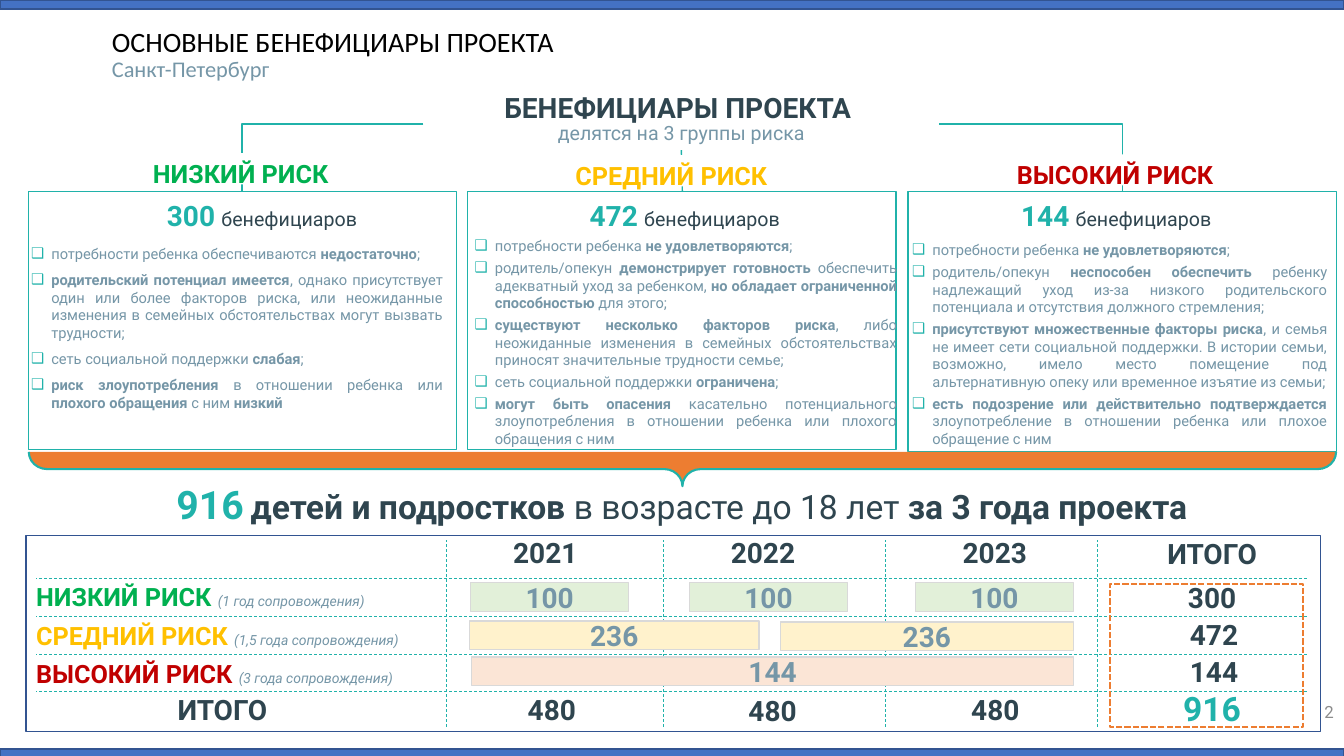
from dataclasses import dataclass
from lxml import etree
from pptx import Presentation
from pptx.dml.color import RGBColor
from pptx.enum import dml, shapes, text
from pptx.oxml.ns import qn
from pptx.util import Pt

DASH, DOTS = dml.MSO_LINE.DASH, dml.MSO_LINE.SQUARE_DOT
RECT = shapes.MSO_SHAPE.RECTANGLE
PLAIN, ELBOW = shapes.MSO_CONNECTOR.STRAIGHT, shapes.MSO_CONNECTOR.ELBOW
LEFT, MID, RIGHT, FULL = (text.PP_ALIGN.LEFT, text.PP_ALIGN.CENTER,
                          text.PP_ALIGN.RIGHT, text.PP_ALIGN.JUSTIFY)


@dataclass(frozen=True)
class Theme:
    font: str = "Roboto"
    head: str = "Calibri"
    teal: str = "20B2AA"
    dark: str = "2F454F"
    slate: str = "7596A7"
    black: str = "000000"
    white: str = "FFFFFF"
    gray: str = "8C8C8C"
    pale: str = "D9D9D9"
    blue: str = "4472C4"
    navy: str = "325491"
    orange: str = "ED7D31"
    green: str = "00B050"
    gold: str = "FFC000"
    red: str = "C00000"
    mint: str = "E2F0D9"
    cream: str = "FFF2CC"
    peach: str = "FBE5D6"
    note: float = 10
    item: float = 10.5
    page: float = 12
    sub: float = 14
    town: float = 16
    risk: float = 18
    main: float = 20
    big: float = 24
    huge: float = 28


T = Theme()


class Board:
    def __init__(self, slide, theme):
        self.slide, self.theme = slide, theme

    def style(self, run, size, color, bold=False, slant=False, font=None):
        f = run.font
        f.name, f.size, f.bold, f.italic = font or self.theme.font, Pt(size), bold, slant
        f.color.rgb = RGBColor.from_string(color)

    def fill(self, para, runs, align=MID, lead=None):
        """Put (text, size, colour, bold, italic) runs into a paragraph."""
        para.alignment = align
        if lead:
            para.line_spacing = Pt(lead)
        for words, *look in runs:
            run = para.add_run()
            run.text = words
            self.style(run, *look)

    def place(self, item, box):
        item.left, item.top, item.width, item.height = map(Pt, box)
        return item

    def label(self, box, *paras, align=MID, lead=None):
        frame = self.slide.shapes.add_textbox(*map(Pt, box)).text_frame
        frame.word_wrap = True
        for n, runs in enumerate(paras):
            para = frame.add_paragraph() if n else frame.paragraphs[0]
            self.fill(para, runs, align, lead)
        return frame

    def shape(self, box, fill=None, edge=None, width=1, dash=None, kind=RECT):
        item = self.slide.shapes.add_shape(kind, *map(Pt, box))
        item.shadow.inherit = False
        if fill:
            item.fill.solid()
            item.fill.fore_color.rgb = RGBColor.from_string(fill)
        else:
            item.fill.background()
        if edge:
            self.pen(item.line, edge, width, dash)
        else:
            item.line.fill.background()
        return item

    def pen(self, line, color, width, dash=None):
        line.color.rgb = RGBColor.from_string(color)
        line.width = Pt(width)
        if dash:
            line.dash_style = dash

    def tag(self, box, runs):
        """White block with unwrapped text that hides the lines behind it."""
        frame = self.shape(box, self.theme.white).text_frame
        frame.word_wrap = False
        frame.auto_size = text.MSO_AUTO_SIZE.SHAPE_TO_FIT_TEXT
        frame.vertical_anchor = text.MSO_ANCHOR.TOP
        self.fill(frame.paragraphs[0], runs, LEFT)

    def bar(self, box, fill, words):
        frame = self.shape(box, fill, self.theme.pale).text_frame
        frame.vertical_anchor = text.MSO_ANCHOR.MIDDLE
        self.fill(frame.paragraphs[0], [(words, self.theme.main, self.theme.slate, True)])

    def line(self, x1, y1, x2, y2, width=1, dash=None, kind=PLAIN):
        item = self.slide.shapes.add_connector(kind, *map(Pt, (x1, y1, x2, y2)))
        self.pen(item.line, self.theme.teal, width, dash)
        props = item._element.spPr
        etree.SubElement(props, qn("a:effectLst"))
        if kind == ELBOW:
            props.find(qn("a:prstGeom")).set("prst", "bentConnector2")

    def body(self, index, box):
        item = self.place(self.slide.placeholders[index], box)
        # Raise the frame above the panels drawn so far
        self.slide.shapes._spTree.append(item._element)
        frame = item.text_frame
        frame.word_wrap = True
        frame.auto_size = text.MSO_AUTO_SIZE.NONE
        frame.vertical_anchor = text.MSO_ANCHOR.TOP
        return frame

    def bullets(self, index, box, gap, items):
        """Checkbox list; words between asterisks are bold."""
        frame = self.body(index, box)
        for n, words in enumerate(items):
            para = frame.add_paragraph() if n else frame.paragraphs[0]
            para.space_before = Pt(gap)
            parts = enumerate(words.split("*"))
            self.fill(para, [(part, self.theme.item, self.theme.slate, k % 2 == 1)
                             for k, part in parts if part], FULL)
            props = para._p.get_or_add_pPr()
            props.set("marL", str(Pt(14.4)))
            props.set("indent", str(-Pt(14.4)))
            tint = etree.SubElement(props, qn("a:buClr"))
            etree.SubElement(tint, qn("a:srgbClr"), val=self.theme.teal)
            etree.SubElement(props, qn("a:buChar"), char="❑")

    def title(self, box, words, looks):
        item = self.place(self.slide.shapes.title, box)
        frame = item.text_frame
        frame.auto_size = text.MSO_AUTO_SIZE.NONE
        frame.vertical_anchor = text.MSO_ANCHOR.MIDDLE
        para = frame.paragraphs[0]
        para.text, para.alignment, para.line_spacing = words, LEFT, 0.9
        for run, (size, color) in zip(para.runs, looks):
            self.style(run, size, color, font=self.theme.head)


# name, colour, heading box, count, count box, panel left and height, list box, gap, items
RISKS = [
    ("НИЗКИЙ РИСК", T.green, (102.2, 109.4, 144, 22.3), "300", (53.3, 138.2, 267.8, 31.7),
     20.2, 184.3, (15.1, 171.4, 308.6, 127.4), 6, [
         "потребности ребенка обеспечиваются *недостаточно*;",
         "*родительский потенциал имеется*, однако присутствует один или более факторов риска, "
         "или неожиданные изменения в семейных обстоятельствах могут вызвать трудности;",
         "сеть социальной поддержки *слабая*;",
         "*риск злоупотребления *в отношении ребенка или *плохого обращения *с ним *низкий*"]),
    ("СРЕДНИЙ РИСК", T.gold, (403.9, 110.9, 159.1, 22.3), "472", (357.8, 138.2, 262.8, 31.7),
     334.1, 184.3, (331.9, 165.6, 316.1, 159.1), 3, [
         "потребности ребенка *не удовлетворяются*;",
         "родитель/опекун *демонстрирует готовность *обеспечить адекватный уход за ребенком, "
         "*но обладает ограниченной способностью* для этого;",
         "*существуют несколько факторов риска*, либо неожиданные изменения в семейных "
         "обстоятельствах приносят значительные трудности семье;",
         "сеть социальной поддержки *ограничена*;",
         "*могут быть опасения *касательно потенциального злоупотребления в отношении ребенка "
         "или плохого обращения с ним"]),
    ("ВЫСОКИЙ РИСК", T.red, (719.3, 110.2, 164.2, 22.3), "144", (666, 138.2, 262.8, 31.7),
     648.7, 185.8, (644.4, 168.5, 311, 156.2), 3, [
         "потребности ребенка *не удовлетворяются*;",
         "родитель/опекун *неспособен обеспечить *ребенку надлежащий уход из-за низкого "
         "родительского потенциала и отсутствия должного стремления;",
         "*присутствуют множественные факторы риска*, и семья не имеет сети социальной "
         "поддержки. В истории семьи, возможно, имело место помещение под альтернативную опеку "
         "или временное изъятие из семьи;",
         "*есть подозрение или действительно подтверждается *злоупотребление в отношении "
         "ребенка или плохое обращение с ним"]),
]
TERMS = ["(1 год сопровождения)", "(1,5 года сопровождения)", "(3 года сопровождения)"]
BARS = [(336.2, 416.2, 113, T.mint, "100"), (492.5, 416.2, 113, T.mint, "100"),
        (653.8, 416.2, 113, T.mint, "100"), (335.5, 443.5, 206.6, T.cream, "236"),
        (557.3, 444.2, 209.5, T.cream, "236"), (337, 469.4, 429.8, T.peach, "144")]


def groups(b):
    b.label((302.4, 69.8, 368.6, 37.4), [("БЕНЕФИЦИАРЫ ПРОЕКТА ", T.main, T.dark, True)],
            [("делятся на 3 группы риска", T.sub, T.slate)], lead=15)
    b.line(302.4, 88.6, 172.8, 136.8, kind=ELBOW)
    b.line(671, 88.6, 801.8, 136.8, kind=ELBOW)
    b.line(486.7, 107.3, 487.4, 136.8)
    for index, risk in zip((1, 2, 4), RISKS):
        name, color, head, count, spot, left, tall, box, gap, items = risk
        b.shape((left, 136.8, 306, tall), T.white, T.teal)
        b.tag(head, [(name, T.risk, color, True)])
        b.label(spot, [(count, T.main, T.teal, True), (" ", T.risk, T.dark, True),
                       ("бенефициаров", T.sub, T.dark)])
        b.bullets(index, box, gap, items)
    brace = b.shape((475.2, -131.8, 24.5, 933.8), T.orange, T.teal, 1.5,
                    kind=shapes.MSO_SHAPE.RIGHT_BRACE)
    brace.rotation = 90
    brace.adjustments[0] = 0.532


def total(b):
    frame = b.body(3, (102.2, 339.8, 769.7, 41))
    b.fill(frame.paragraphs[0], [
        ("916", T.huge, T.teal, True), (" ", T.main, T.dark),
        ("детей и подростков", T.big, T.dark, True),
        (" в возрасте до 18 лет ", T.big, T.dark), ("за 3 года проекта", T.big, T.dark, True)])
    frame.paragraphs[0].space_before = Pt(0)


def years(b):
    for x in (319, 473.8, 632.2, 784.1):
        b.line(x, 519.1, x, 385.9, 0.5, DASH)
    for risk, term, y in zip(RISKS, TERMS, (411.8, 439.9, 466.6)):
        b.tag((18.7, y, 285, 30), [(risk[0] + " ", T.risk, risk[1], True),
                                   (term, T.note, T.slate, False, True)])
    for n in range(4):
        y = 413.3 + 26.9 * n
        b.line(933.5, y, 26, y, 0.5, DASH)
    b.shape((18.7, 382.3, 924.5, 140.4), edge=T.navy)
    cells = [("2021", 351.4, 388.1), ("2022", 506.9, 388.1), ("2023", 672.5, 388.1),
             ("ИТОГО", 817.2, 388.8), ("ИТОГО", 110.2, 500.4),
             ("300", 817.2, 419.8), ("472", 818.6, 446.4), ("144", 818.6, 473),
             ("480", 345.6, 500.4), ("480", 503.3, 501.1), ("480", 662.4, 500.4)]
    for words, x, y in cells:
        wide = 76.3 if words.startswith("20") else 97.2
        b.label((x, y, wide, 23), [(words, T.main, T.dark, True)], lead=15)
    b.label((817.2, 501.8, 97.2, 23.8), [("916", T.big, T.teal, True)], lead=15)
    for x, y, wide, fill, words in BARS:
        b.bar((x, y, wide, 20.5), fill, words)
    b.shape((792.7, 416.9, 138.2, 102.2), edge=T.orange, width=1.5, dash=DOTS)


def main():
    deck = Presentation()
    deck.slide_width, deck.slide_height = Pt(960), Pt(540)
    board = Board(deck.slides.add_slide(deck.slide_layouts[4]), T)
    board.title((72.7, 16.6, 631.4, 46.1), "ОСНОВНЫЕ БЕНЕФИЦИАРЫ ПРОЕКТА\vСанкт-Петербург",
                [(T.main, T.black), (T.town, T.slate)])
    groups(board)
    total(board)
    years(board)
    page = board.label((934.6, 493.9, 25.2, 28.8), [("2", T.page, T.gray)], align=RIGHT)
    page.vertical_anchor = text.MSO_ANCHOR.MIDDLE
    for y in (535, 0):
        board.shape((0, y, 960, 6.5), T.blue, T.navy)
    deck.save("out.pptx")


if __name__ == "__main__":
    main()
